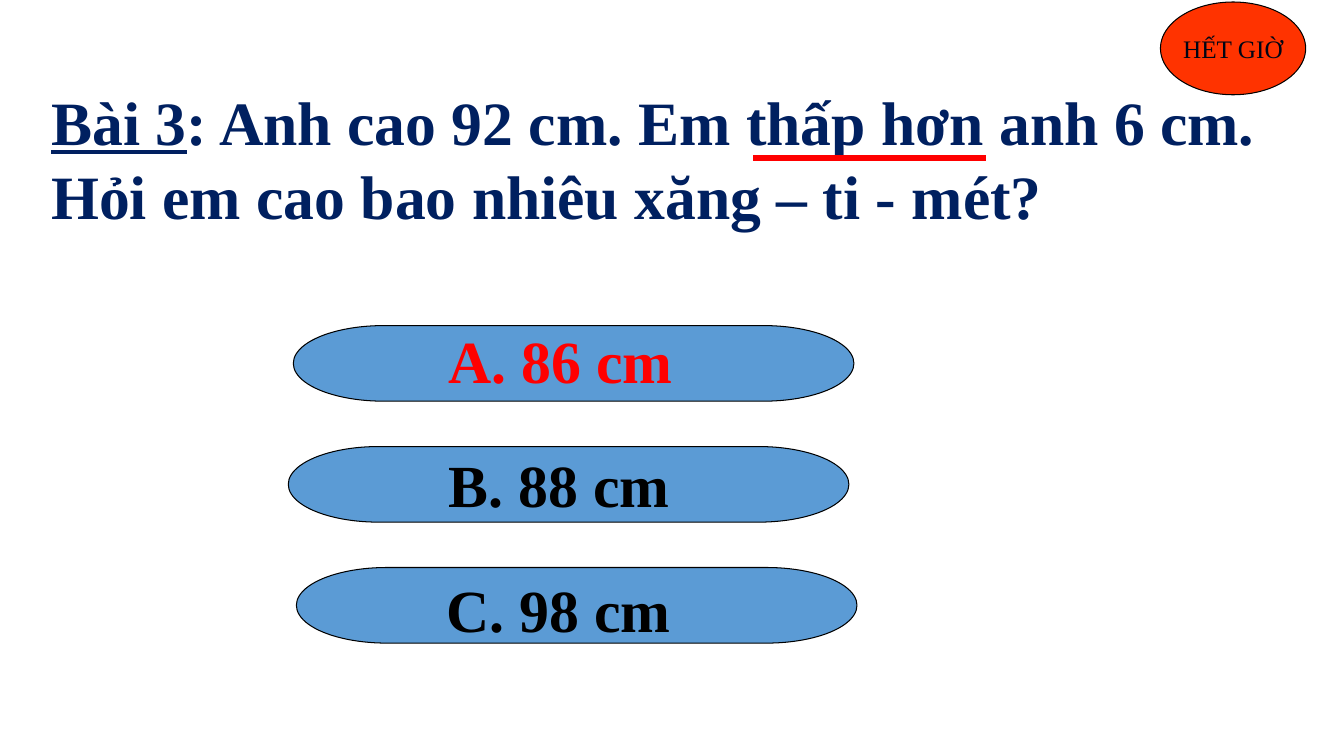
from lxml import etree
from pptx import Presentation
from pptx.dml.color import RGBColor
from pptx.enum import shapes, text
from pptx.oxml import ns
from pptx.util import Inches, Pt

NAVY = RGBColor(0x00, 0x20, 0x60)
BLUE = RGBColor(0x5B, 0x9B, 0xD5)
RED = RGBColor(0xFF, 0x00, 0x00)
ORANGE = RGBColor(0xFF, 0x33, 0x00)
BLACK = RGBColor(0x00, 0x00, 0x00)
INK = RGBColor(0x00, 0x05, 0x14)

deck = Presentation()
deck.slide_width, deck.slide_height = Inches(13.33), Inches(7.5)
page = deck.slides.add_slide(deck.slide_layouts[6])


def add_panel(kind, place, fill):
    """Add a filled shape with a thin black outline."""
    panel = page.shapes.add_shape(kind, *map(Inches, place))
    panel.shadow.inherit = False
    panel.fill.solid()
    panel.fill.fore_color.rgb = fill
    panel.line.color.rgb = BLACK
    panel.line.width = Pt(0.75)
    return panel


def write(box, spans, align, size, color, bold=True, spaced=True):
    """Fill the first paragraph with (wording, underlined) spans."""
    para = box.text_frame.paragraphs[0]
    para.alignment = align
    if spaced:
        before = etree.SubElement(para._p.get_or_add_pPr(), ns.qn("a:spcBef"))
        etree.SubElement(before, ns.qn("a:spcPct"), val="50000")
    for wording, underlined in spans:
        span = para.add_run()
        span.text = wording
        look = {"name": "Times New Roman", "size": Pt(size), "bold": bold, "underline": underlined}
        for name, value in look.items():
            setattr(span.font, name, value)
        span.font.color.rgb = color


question = page.shapes.add_textbox(*map(Inches, (0.41, 0.78, 13.18, 1.58)))
question.text_frame.word_wrap = True
write(question, [("Bài 3", True),
                 (": Anh cao 92 cm. Em thấp hơn anh 6 cm. Hỏi em cao bao nhiêu xăng – ti - mét?", False)],
      text.PP_ALIGN.LEFT, 44, NAVY)

# wording, colour, pill left, text left, text top, text width, extra left inset
answers = [
    ("A. 86 cm", RED, 2.91, 3.34, 3.16, 4.44, 0),
    ("B. 88 cm", BLACK, 2.86, 3.03, 4.39, 4.44, 0.59),
    ("C. 98 cm", BLACK, 2.94, 2.94, 5.63, 4.61, 0.59),
]
for row, (wording, color, pill_left, left, top, width, inset) in enumerate(answers):
    add_panel(shapes.MSO_SHAPE.FLOWCHART_TERMINATOR, (pill_left, 3.23 + 1.2 * row, 5.56, 0.75), BLUE)
    answer = page.shapes.add_textbox(*map(Inches, (left, top, width, 0.82)))
    answer.text_frame.word_wrap = True
    answer.text_frame.margin_left = Inches(0.1 + inset)
    write(answer, [(wording, False)], text.PP_ALIGN.CENTER, 42.7, color)

time_up = add_panel(shapes.MSO_SHAPE.OVAL, (11.51, 0.02, 1.44, 0.92), ORANGE)
time_up.text_frame.word_wrap = False
time_up.text_frame.vertical_anchor = text.MSO_ANCHOR.MIDDLE
write(time_up, [("HẾT GIỜ", False)], text.PP_ALIGN.CENTER, 18, INK, bold=False, spaced=False)

underline = page.shapes.add_connector(shapes.MSO_CONNECTOR.STRAIGHT, *map(Inches, (7.47, 1.57, 9.78, 1.57)))
underline.line.color.rgb = RED
underline.line.width = Pt(4.5)
etree.SubElement(underline._element.spPr, ns.qn("a:effectLst"))

deck.save("out.pptx")
